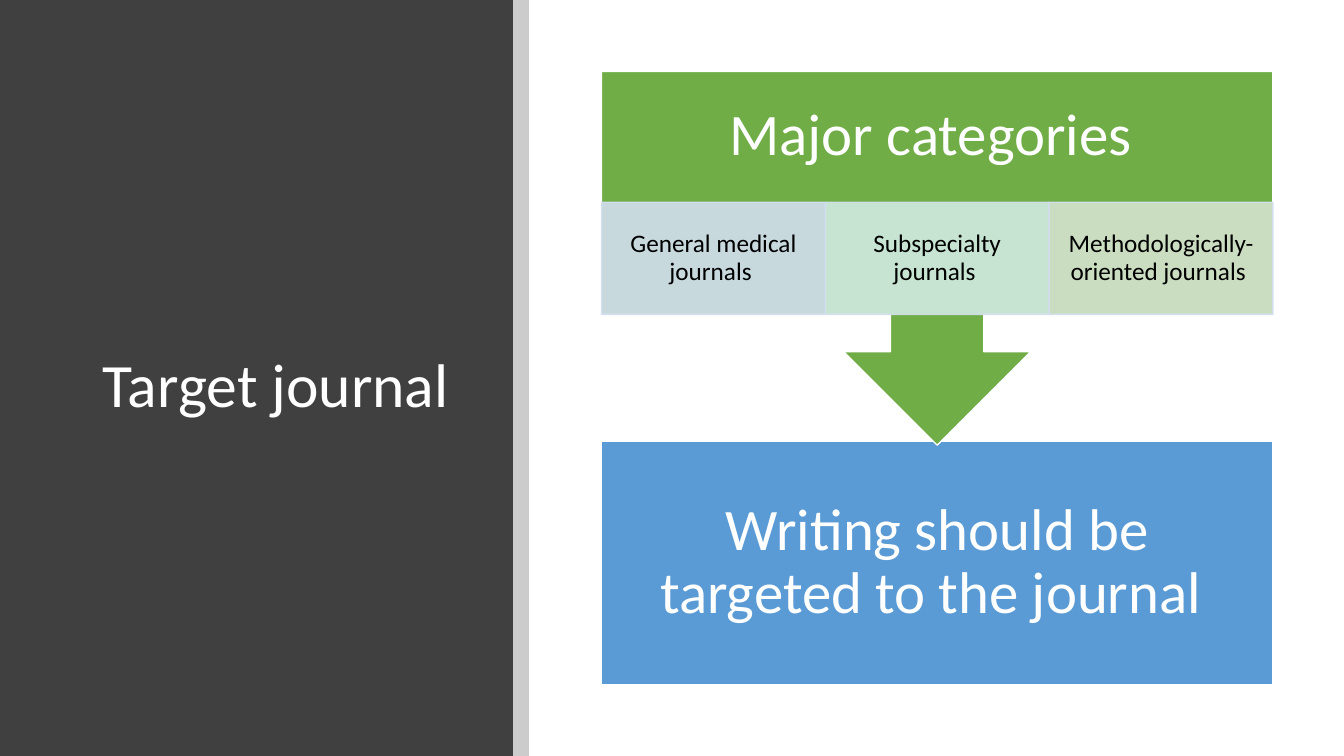
from dataclasses import dataclass

from lxml import etree
from pptx import Presentation
from pptx.dml.color import RGBColor
from pptx.enum.shapes import MSO_SHAPE
from pptx.enum.text import MSO_ANCHOR, PP_ALIGN
from pptx.oxml.ns import qn
from pptx.util import Cm, Pt

RECT = MSO_SHAPE.RECTANGLE
CALLOUT = MSO_SHAPE.DOWN_ARROW_CALLOUT
MIDDLE = MSO_ANCHOR.MIDDLE
LEFT, CENTER = PP_ALIGN.LEFT, PP_ALIGN.CENTER


@dataclass(frozen=True)
class Theme:
    """Colours, font and type sizes of the slide."""
    font: str = "Calibri"
    white: str = "FFFFFF"
    black: str = "000000"
    panel: str = "404040"
    green: str = "70AD47"
    blue: str = "5B9BD5"
    cell_line: str = "D2DEEF"
    cell_fills: tuple = ("D2DEEF", "D0EAE1", "D5E3CF")
    title_size: int = 44
    box_size: int = 42
    cell_size: int = 18


T = Theme()
CATEGORIES = ("General medical journals ", "Subspecialty journals ",
              "Methodologically-oriented journals ")


def add_box(s, kind, box, fill, line=None, alpha=None):
    """Add a shape at box (cm) with fill, optional line and opacity in percent."""
    sp = s.shapes.add_shape(kind, *map(Cm, box))
    sp.shadow.inherit = False
    sp.fill.solid()
    sp.fill.fore_color.rgb = RGBColor.from_string(fill)
    if line:
        sp.line.color.rgb = RGBColor.from_string(line)
        sp.line.width = Pt(1)
    else:
        sp.line.fill.background()
    if alpha:
        for clr in sp._element.spPr.iter(qn("a:srgbClr")):
            etree.SubElement(clr, qn("a:alpha")).set("val", str(alpha * 1000))
    return sp


def write(sp, text, size, color, align=CENTER, insets=(0.25, 0.13, 0.25, 0.13)):
    """Write one middle-anchored paragraph; insets are left, top, right, bottom in cm."""
    tf = sp.text_frame
    tf.word_wrap = True
    tf.vertical_anchor = MIDDLE
    tf.margin_left, tf.margin_top, tf.margin_right, tf.margin_bottom = map(Cm, insets)
    p = tf.paragraphs[0]
    p.alignment = align
    p.line_spacing = 0.9
    r = p.add_run()
    r.text = text
    r.font.name = T.font
    r.font.size = Pt(size)
    r.font.color.rgb = RGBColor.from_string(color)


def title_panel(s, x, y, w, h):
    """Draw the dark panel with its edge stripe and place the title on it."""
    stripe = 0.4
    add_box(s, RECT, (x, y, w - stripe, h), T.panel)
    add_box(s, RECT, (x + w - stripe, y, stripe, h), T.black, alpha=20)
    title = s.shapes.title
    s.shapes._spTree.append(title._element)
    title.left, title.top = Cm(x + 2.34), Cm(y + 2.26)
    title.width, title.height = Cm(9.27), Cm(15)
    write(title, "Target journal", T.title_size, T.white, LEFT)


def conclusion(s, x, y, w, h):
    """Draw the blue box that the arrow points to."""
    sp = add_box(s, RECT, (x, y, w, h), T.blue, T.white)
    write(sp, "Writing should be targeted to the journal ", T.box_size, T.white,
          insets=(0.84,) * 4)


def categories(s, x, y, w, h):
    """Draw the green arrow callout with its heading and a row of category cells."""
    body, cell_h = 0.65 * h, 0.3 * h
    cell_w = w / len(CATEGORIES)
    sp = add_box(s, CALLOUT, (x, y, w, h), T.green, T.white)
    sp.adjustments[3] = 0.65
    write(sp, "Major categories ", T.box_size, T.white,
          insets=(0.84, 0.84, 0.84, 0.84 + cell_h))
    for i, (text, fill) in enumerate(zip(CATEGORIES, T.cell_fills)):
        cell = add_box(s, RECT, (x + i * cell_w, y + body - cell_h, cell_w, cell_h),
                       fill, T.cell_line, alpha=90)
        write(cell, text, T.cell_size, T.black, insets=(0.36, 0.08, 0.36, 0.08))


def main():
    """Build the slide and save it."""
    prs = Presentation()
    prs.slide_width, prs.slide_height = Cm(33.87), Cm(19.05)
    s = prs.slides.add_slide(prs.slide_layouts[5])
    title_panel(s, 0, 0, 13.33, 19.05)
    conclusion(s, 15.16, 11.13, 16.92, 6.12)
    categories(s, 15.16, 1.8, 16.92, 9.42)
    prs.save("out.pptx")


if __name__ == "__main__":
    main()
